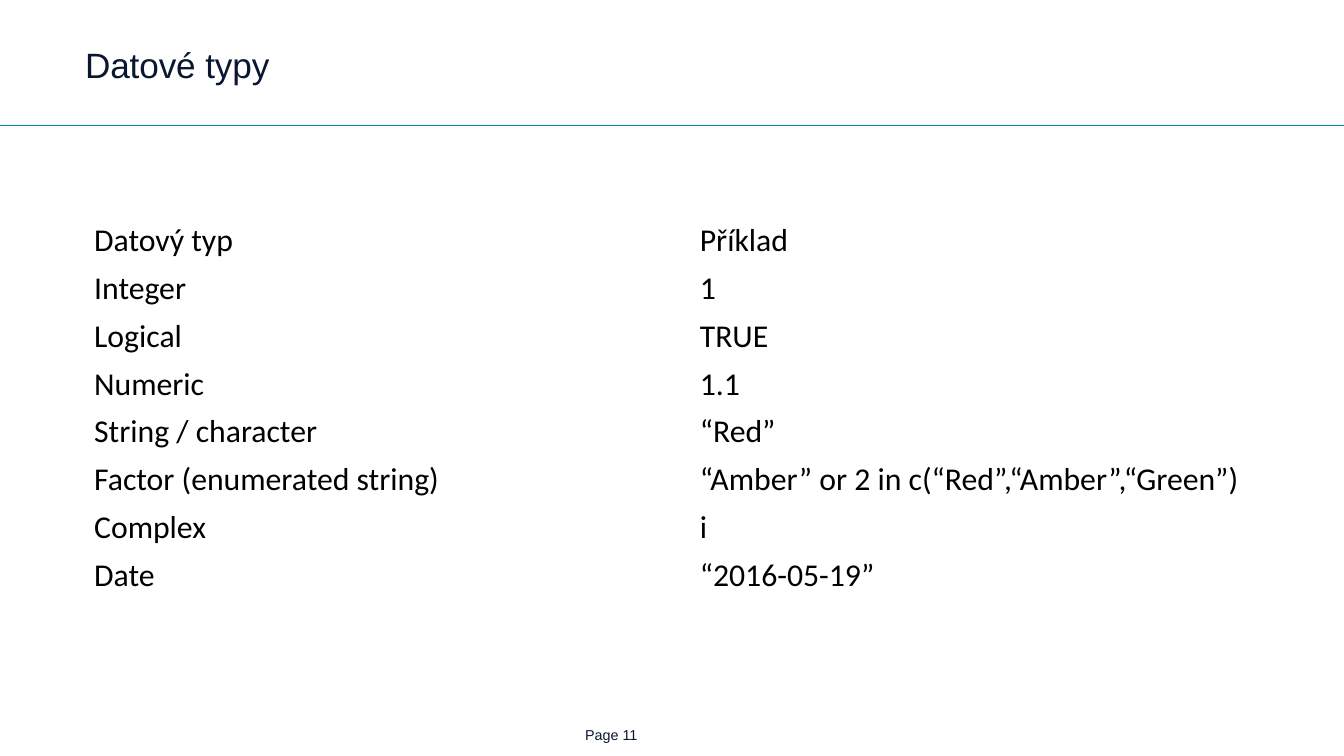
from lxml.etree import SubElement
from pptx import Presentation
from pptx.dml.color import RGBColor
from pptx.enum.shapes import MSO_CONNECTOR as Connector
from pptx.enum.text import MSO_ANCHOR as Anchor, PP_ALIGN as Align
from pptx.oxml.ns import qn
from pptx.util import Inches, Pt

WIDTH, HEIGHT = 14.7, 8.27
MARGIN = 0.93
CONTENT_WIDTH = 13.25
NAVY, TEAL, BLACK = "0A1731", "008CA8", "000000"

DATA_TYPES = [
    ("Datový typ", "Příklad"),
    ("Integer", "1"),
    ("Logical", "TRUE"),
    ("Numeric", "1.1"),
    ("String / character", "“Red”"),
    ("Factor (enumerated string)", "“Amber” or 2 in c(“Red”,“Amber”,“Green”)"),
    ("Complex", "i"),
    ("Date", "“2016-05-19”"),
]


def color(value):
    return RGBColor.from_string(value)


def add_span(para, text, font_name, size, fill):
    span = para.add_run()
    span.text = text
    span.font.name = font_name
    span.font.size = Pt(size)
    span.font.bold = False
    span.font.color.rgb = color(fill)
    return span


def set_frame(frame, anchor, left=0, right=0):
    frame.word_wrap = True
    frame.vertical_anchor = anchor
    frame.margin_left, frame.margin_right = Inches(left), Inches(right)
    frame.margin_top = frame.margin_bottom = 0


def add_header(page, left, top, width, height):
    # Title
    title = page.shapes.title
    title.left, title.top = Inches(left), Inches(top)
    title.width, title.height = Inches(width), Inches(height)
    set_frame(title.text_frame, Anchor.TOP, right=0.09)
    para = title.text_frame.paragraphs[0]
    para.alignment = Align.LEFT
    para.line_spacing = 0.85
    para.space_before = Pt(0)
    para.space_after = Pt(7.5)
    span = add_span(para, "Datové typy", "Arial", 27.7, NAVY)
    span.font._element.set("spc", "-10")

    # Rule across the whole slide
    rule_y = Inches(HEIGHT / 6)
    rule = page.shapes.add_connector(
        Connector.STRAIGHT, 0, rule_y, Inches(WIDTH), rule_y)
    rule.line.color.rgb = color(TEAL)
    rule.line.width = Pt(0.75)
    SubElement(rule._element.spPr, qn("a:effectLst"))


def add_type_table(page, left, top, width, height):
    table = page.shapes.add_table(
        len(DATA_TYPES), len(DATA_TYPES[0]),
        Inches(left), Inches(top), Inches(width), Inches(height)).table
    table.first_row = table.horz_banding = False
    for row, texts in enumerate(DATA_TYPES):
        for column, text in enumerate(texts):
            cell = table.cell(row, column)
            cell.fill.background()
            cell.vertical_anchor = Anchor.MIDDLE
            cell.margin_top = cell.margin_bottom = Inches(0.04)
            add_span(cell.text_frame.paragraphs[0], text, "Calibri", 25, BLACK)


def add_page_number(page, left, top, width, height):
    box = page.shapes.add_textbox(
        Inches(left), Inches(top), Inches(width), Inches(height))
    set_frame(box.text_frame, Anchor.BOTTOM, left=0.04)
    add_span(box.text_frame.paragraphs[0], "Page 11", "Arial", 11.3, NAVY)


def main():
    deck = Presentation()
    deck.slide_width, deck.slide_height = Inches(WIDTH), Inches(HEIGHT)
    page = deck.slides.add_slide(deck.slide_layouts[5])
    add_header(page, MARGIN, 0.55, CONTENT_WIDTH, 0.7)
    add_type_table(page, MARGIN, 2.37, CONTENT_WIDTH, 4.19)
    add_page_number(page, 6.36, 7.97, 0.96, 0.16)
    deck.save("out.pptx")


if __name__ == "__main__":
    main()
